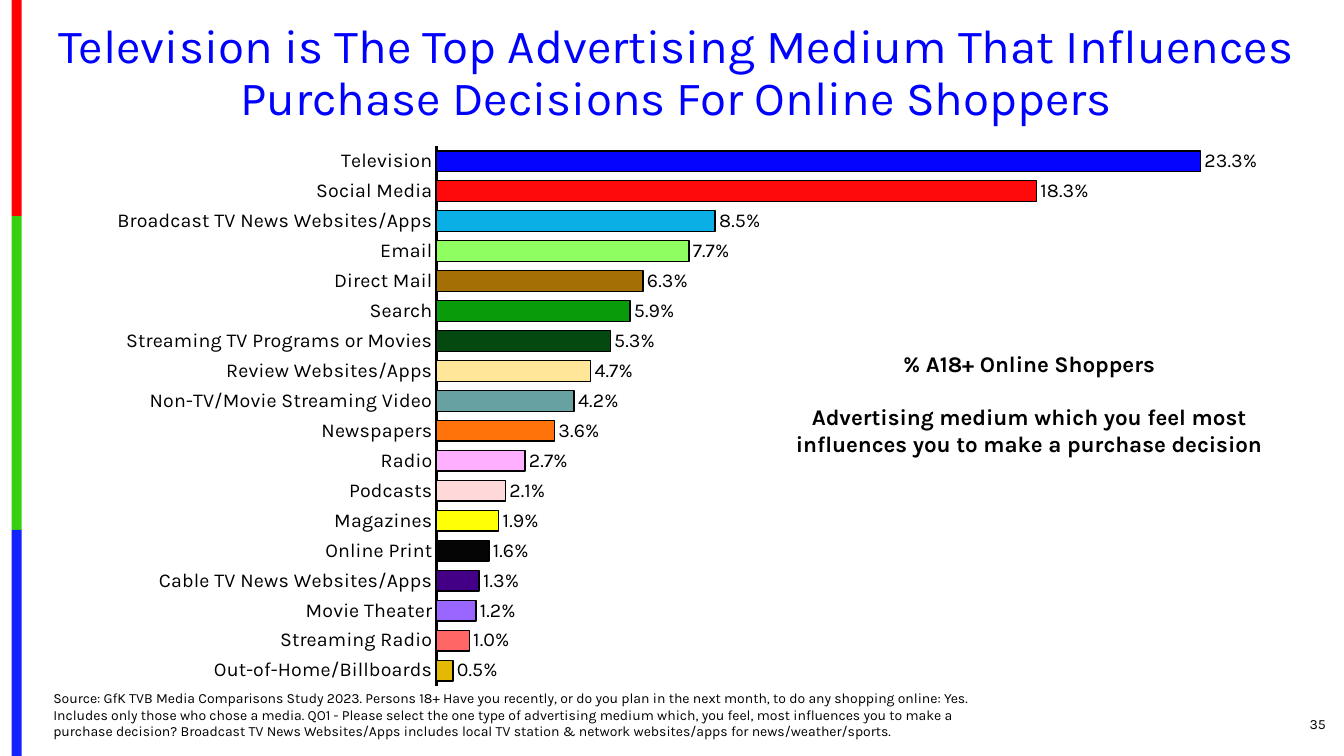
"""Build the slide on advertising media that influence online shoppers."""
from dataclasses import dataclass
from typing import Any

import lxml.etree
import pptx
import pptx.chart.chart
import pptx.chart.data
import pptx.dml.color
import pptx.dml.fill
import pptx.enum.chart
import pptx.enum.shapes
import pptx.enum.text
import pptx.oxml.ns
import pptx.slide
import pptx.text.text
import pptx.util

Pt = pptx.util.Pt
Align = pptx.enum.text.PP_ALIGN
Anchor = pptx.enum.text.MSO_ANCHOR

FONT = "Karla"
BLACK = "000000"
STRIP_LEFT, STRIP_WIDTH = 8.3, 7.2
PLOT_LAYOUT = {"x": 0.317, "y": 0.029, "w": 0.666, "h": 0.966}


@dataclass(frozen=True)
class Medium:
    name: str
    share: float
    fill: str


@dataclass(frozen=True)
class Strip:
    top: float
    bottom: float
    fill: str


@dataclass(frozen=True)
class Note:
    box: tuple[float, float, float, float]
    paragraphs: tuple[str, ...]
    size: float
    align: Any
    anchor: Any
    bold: bool = False
    gap: float = 0


MEDIA = [
    Medium("Television", 0.233, "0505FF"),
    Medium("Social Media", 0.183, "FF0A0A"),
    Medium("Broadcast TV News Websites/Apps", 0.085, "0AAFE6"),
    Medium("Email", 0.077, "8EFE60"),
    Medium("Direct Mail", 0.063, "A46F05"),
    Medium("Search", 0.059, "0A9B0A"),
    Medium("Streaming TV Programs or Movies", 0.053, "034910"),
    Medium("Review Websites/Apps", 0.047, "FFE699"),
    Medium("Non-TV/Movie Streaming Video", 0.042, "67A1A1"),
    Medium("Newspapers", 0.036, "FF730A"),
    Medium("Radio", 0.027, "FFAFFF"),
    Medium("Podcasts", 0.021, "FFD9D9"),
    Medium("Magazines", 0.019, "FFFF05"),
    Medium("Online Print", 0.016, "050505"),
    Medium("Cable TV News Websites/Apps", 0.013, "430086"),
    Medium("Movie Theater", 0.012, "9966FF"),
    Medium("Streaming Radio", 0.01, "FF6666"),
    Medium("Out-of-Home/Billboards", 0.005, "E3B905"),
]

STRIPS = [
    Strip(0, 154.5, "FE0000"),
    Strip(154.5, 378.5, "36CF12"),
    Strip(378.5, 540, "1322FE"),
]

TITLE = Note(
    (24, 12.2, 918, 81.4),
    ("Television is The Top Advertising Medium That Influences "
     "Purchase Decisions For Online Shoppers",),
    34, Align.CENTER, Anchor.MIDDLE,
)

NOTES = [
    Note((876.2, 502.5, 77.8, 28.8), ("35",), 10, Align.RIGHT, Anchor.MIDDLE),
    Note(
        (31, 476.6, 695.5, 55.4),
        ("Source: GfK TVB Media Comparisons Study 2023. Persons 18+ Have you recently, or do you "
         "plan in the next month, to do any shopping online: Yes. Includes only those who chose a "
         "media. QO1 - Please select the one type of advertising medium which, you feel, most "
         "influences you to make a purchase decision? Broadcast TV News Websites/Apps includes "
         "local TV station & network websites/apps for news/weather/sports.",),
        10, Align.LEFT, Anchor.BOTTOM,
    ),
    Note(
        (540, 246.2, 390.2, 104.4),
        ("% A18+ Online Shoppers",
         "Advertising medium which you feel most influences you to make a purchase decision"),
        16, Align.CENTER, Anchor.TOP, bold=True, gap=19,
    ),
]


def apply_format(target: Any, values: dict[str, Any]) -> None:
    for name, value in values.items():
        setattr(target, name, value)


def set_colour(color_format: pptx.dml.color.ColorFormat, value: str) -> None:
    color_format.rgb = pptx.dml.color.RGBColor.from_string(value)


def set_fill(fill: pptx.dml.fill.FillFormat, value: str) -> None:
    fill.solid()
    set_colour(fill.fore_color, value)


def set_font(font: pptx.text.text.Font, size: float, value: str = BLACK, bold: bool = False) -> None:
    apply_format(font, {"name": FONT, "size": Pt(size), "bold": bold})
    set_colour(font.color, value)


def write_note(shape: Any, note: Note, value: str = BLACK, line_spacing: float = 1.0) -> None:
    frame = shape.text_frame
    apply_format(frame, {
        "text": "\n".join(note.paragraphs), "word_wrap": True, "vertical_anchor": note.anchor,
        "auto_size": pptx.enum.text.MSO_AUTO_SIZE.NONE,
    })
    for index, paragraph in enumerate(frame.paragraphs):
        apply_format(paragraph, {
            "alignment": note.align, "line_spacing": line_spacing,
            "space_before": Pt(note.gap if index else 0),
        })
        for run in paragraph.runs:
            set_font(run.font, note.size, value, note.bold)


def add_strip(slide: pptx.slide.Slide, strip: Strip) -> None:
    shape = slide.shapes.add_shape(
        pptx.enum.shapes.MSO_SHAPE.RECTANGLE, Pt(STRIP_LEFT), Pt(strip.top),
        Pt(STRIP_WIDTH), Pt(strip.bottom - strip.top))
    shape.shadow.inherit = False
    set_fill(shape.fill, strip.fill)
    shape.line.fill.background()


def place_plot(chart: pptx.chart.chart.Chart) -> None:
    qualified = pptx.oxml.ns.qn
    plot_area = chart.plots[0]._element.getparent()
    for old_layout in plot_area.findall(qualified("c:layout")):
        plot_area.remove(old_layout)
    layout = lxml.etree.Element(qualified("c:layout"))
    manual = lxml.etree.SubElement(layout, qualified("c:manualLayout"))
    settings = {"layoutTarget": "inner", "xMode": "edge", "yMode": "edge", **PLOT_LAYOUT}
    for tag, value in settings.items():
        lxml.etree.SubElement(manual, qualified(f"c:{tag}")).set("val", str(value))
    plot_area.insert(0, layout)


def add_media_chart(slide: pptx.slide.Slide) -> None:
    data = pptx.chart.data.CategoryChartData(number_format="0.0%")
    data.categories = [medium.name for medium in MEDIA]
    data.add_series("Series 1", [medium.share for medium in MEDIA])
    chart = slide.shapes.add_chart(
        pptx.enum.chart.XL_CHART_TYPE.BAR_CLUSTERED,
        Pt(33.1), Pt(92.9), Pt(879.1), Pt(398.9), data).chart
    apply_format(chart, {"has_title": False, "has_legend": False})
    set_font(chart.font, 10)

    tick_none = pptx.enum.chart.XL_TICK_MARK.NONE
    category_axis = chart.category_axis
    apply_format(category_axis, {
        "reverse_order": True, "major_tick_mark": tick_none, "minor_tick_mark": tick_none,
        "has_major_gridlines": False,
    })
    set_font(category_axis.tick_labels.font, 14)
    category_axis.format.line.width = Pt(1.5)
    set_fill(category_axis.format.line.fill, BLACK)
    apply_format(chart.value_axis, {
        "visible": False, "has_major_gridlines": False, "minimum_scale": 0, "maximum_scale": 0.25,
    })

    plot = chart.plots[0]
    apply_format(plot, {"gap_width": 45, "vary_by_categories": False})
    series = plot.series[0]
    for index, medium in enumerate(MEDIA):
        bar = series.points[index].format
        set_fill(bar.fill, medium.fill)
        set_fill(bar.line.fill, BLACK)
        bar.line.width = Pt(1)
    labels = series.data_labels
    apply_format(labels, {
        "show_value": True, "number_format": "0.0%", "number_format_is_linked": False,
        "position": pptx.enum.chart.XL_LABEL_POSITION.OUTSIDE_END,
    })
    set_font(labels.font, 14)
    place_plot(chart)


def main() -> None:
    presentation = pptx.Presentation()
    apply_format(presentation, {"slide_width": Pt(960), "slide_height": Pt(540)})
    slide = presentation.slides.add_slide(presentation.slide_layouts.get_by_name("Title Only"))
    for strip in STRIPS:
        add_strip(slide, strip)
    add_media_chart(slide)
    title = slide.shapes.title
    apply_format(title, dict(zip(("left", "top", "width", "height"), map(Pt, TITLE.box))))
    write_note(title, TITLE, "0000FF", 0.9)
    for note in NOTES:
        write_note(slide.shapes.add_textbox(*map(Pt, note.box)), note)
    presentation.save("out.pptx")


if __name__ == "__main__":
    main()
